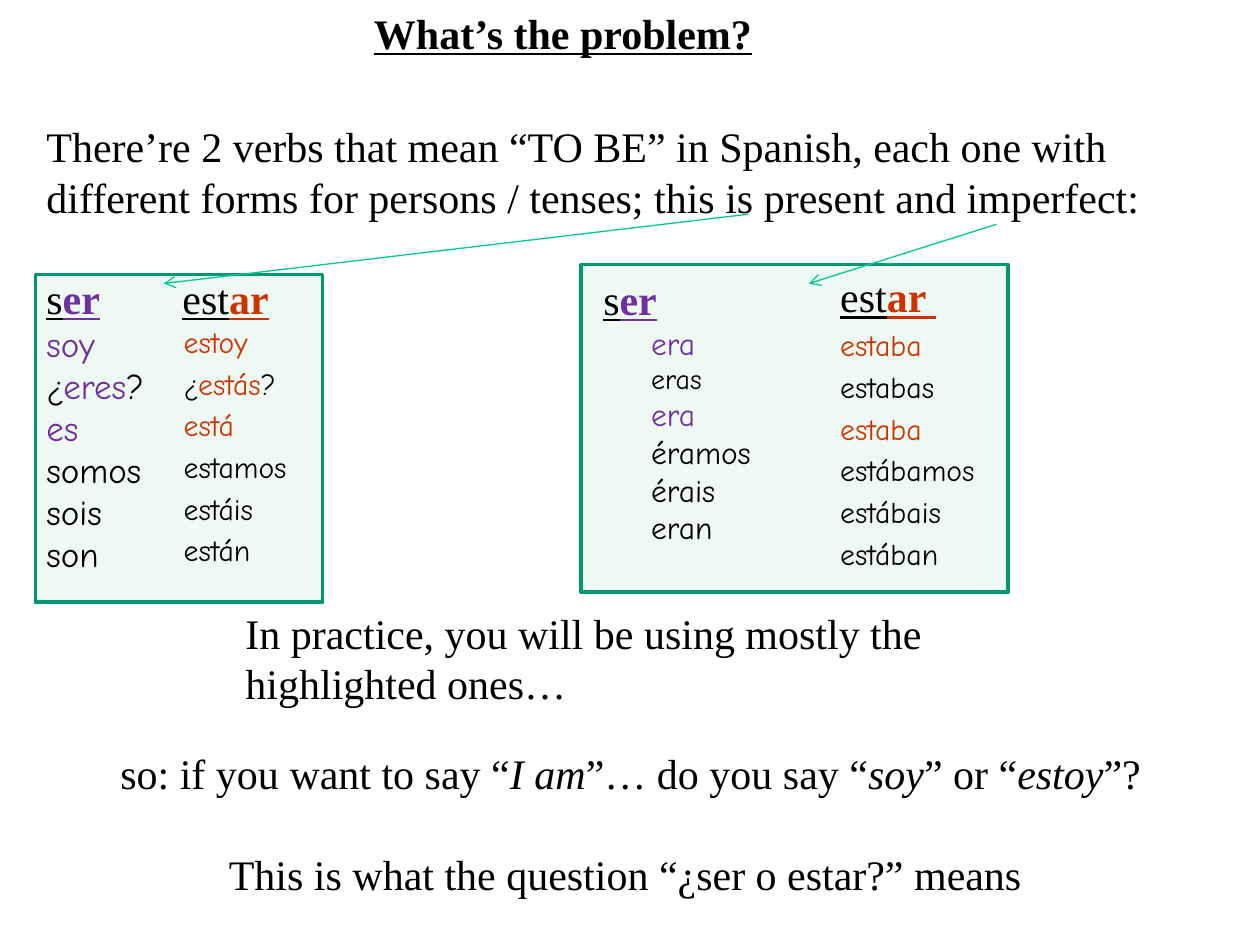
import pptx
import pptx.util
import pptx.dml.color
import pptx.enum.shapes
import pptx.enum.text
import pptx.oxml.ns
import lxml.etree

Inches = pptx.util.Inches
Pt = pptx.util.Pt
HUES = {"ink": "000000", "violet": "7030A0", "rust": "CC3300",
        "mint": "EEF9F4", "edge": "009771", "arrow": "00C896"}
MARKS = {"b": "bold", "i": "italic", "u": "underline"}
SERIF = "Times New Roman"
COMIC = "Comic Neue"
BLANK = 29


def hue(name):
    return pptx.dml.color.RGBColor.from_string(HUES[name])


def tag(root, name, **atts):
    return lxml.etree.SubElement(root, pptx.oxml.ns.qn(name), **atts)


def row(*runs, size=24, font=SERIF, **form):
    return {"runs": runs, "size": size, "font": font, "form": form}


def word(text, tint="ink", size=20, **form):
    return row((text, tint), size=size, font=COMIC, **form)


class Deck:
    def __init__(self):
        self.show = pptx.Presentation()
        self.show.slide_width = Inches(10)
        self.show.slide_height = Inches(7.5)
        self.page = self.show.slides.add_slide(self.show.slide_layouts[6])

    def panel(self, *area):
        kind = pptx.enum.shapes.MSO_SHAPE.RECTANGLE
        box = self.page.shapes.add_shape(kind, *map(Inches, area))
        box.shadow.inherit = False
        box.fill.solid()
        box.fill.fore_color.rgb = hue("mint")
        box.line.color.rgb = hue("edge")
        box.line.width = Pt(2)

    def text(self, area, rows):
        frame = self.page.shapes.add_textbox(*map(Inches, area)).text_frame
        frame.word_wrap = True
        for num, item in enumerate(rows):
            para = frame.add_paragraph() if num else frame.paragraphs[0]
            self.line(para, item, num)

    def line(self, para, item, num):
        form = dict(item["form"])
        props = para._p.get_or_add_pPr()
        if "left" in form:
            props.set("marL", str(Inches(form.pop("left"))))
        if "tab" in form:
            stops = tag(props, "a:tabLst")
            tag(stops, "a:tab", pos=str(Inches(form.pop("tab"))), algn="l")
        gap = form.pop("gap", 0)
        if num and gap:
            para.space_before = Pt(gap)
        for key, val in form.items():
            setattr(para, key, val)
        for text, tint, *marks in item["runs"]:
            run = para.add_run()
            run.text = text
            look = {"name": item["font"], "size": Pt(item["size"])}
            look.update({MARKS[mark]: True for mark in "".join(marks)})
            for key, val in look.items():
                setattr(run.font, key, val)
            run.font.color.rgb = hue(tint)

    def arrow(self, *ends):
        kind = pptx.enum.shapes.MSO_CONNECTOR.STRAIGHT
        link = self.page.shapes.add_connector(kind, *map(Inches, ends))
        link.line.color.rgb = hue("arrow")
        link.line.width = Pt(0.75)
        tag(link.line._get_or_add_ln(), "a:tailEnd", type="arrow")
        tag(link._element.spPr, "a:effectLst")


def main():
    deck = Deck()
    mid = {"alignment": pptx.enum.text.PP_ALIGN.CENTER}
    ser = (("s", "ink", "u"), ("er", "violet", "bu"))
    est = ("est", "ink", "u")

    deck.panel(4.61, 2.1, 3.39, 2.6)
    deck.panel(0.28, 2.18, 2.28, 2.6)
    deck.text((2.87, 0.01, 3.23, 0.51),
              [row(("What’s the problem?", "ink", "bu"))])

    deck.text((0.27, 0.91, 9.37, 3.74), [
        row(("There’re 2 verbs that mean “TO BE” in Spanish, each one with "
             "different forms for persons / tenses; this is present and "
             "imperfect:", "ink")),
        row(*ser, ("\t", "ink"), est, ("ar", "rust", "bu"),
            gap=BLANK, tab=1.08),
        word("soy", "violet"),
        row(("¿", "ink"), ("eres", "violet"), ("?", "ink"),
            size=20, font=COMIC),
        word("es", "violet"),
        *map(word, ("somos", "sois", "son"))])

    small = {"size": 17, "gap": 3.4}
    deck.text((1.36, 2.52, 1.53, 2.26), [
        word("estoy", "rust", **small),
        row(("¿", "ink"), ("estás", "rust"), ("?", "ink"),
            font=COMIC, **small),
        word("está", "rust", **small),
        *(word(verb, **small) for verb in ("estamos", "estáis", "están"))])

    deck.text((1.85, 4.77, 6.06, 0.91),
              [row(("In practice, you will be using mostly the highlighted "
                    "ones…", "ink"))])
    deck.text((0.75, 5.88, 8.51, 1.31), [
        row(("so: if you want to say “", "ink"), ("I am", "ink", "i"),
            ("”… do you say “", "ink"), ("soy", "ink", "i"),
            ("” or “", "ink"), ("estoy", "ink", "i"), ("”?", "ink"), **mid),
        row(("This is what the question “¿ser o estar?” means ", "ink"),
            gap=BLANK, **mid)])

    past = (("estaba", "rust"), ("estabas", "ink"), ("estaba", "rust"),
            ("estábamos", "ink"), ("estábais", "ink"), ("estában", "ink"))
    deck.text((6.57, 2.1, 1.53, 2.26),
              [row(est, ("ar ", "rust", "bu")),
               *(word(*pair, **small) for pair in past)])

    forms = (("era", "violet", 18), ("eras", "ink", 16), ("era", "violet", 18),
             ("éramos", "ink", 18), ("érais", "ink", 18), ("eran", "ink", 18))
    deck.text((4.69, 2.12, 1.53, 2.26),
              [row(*ser), *(word(*form, left=0.38) for form in forms)])

    deck.arrow(5.94, 1.7, 1.3, 2.25)
    deck.arrow(7.91, 1.78, 6.42, 2.25)
    deck.show.save("out.pptx")


if __name__ == "__main__":
    main()
